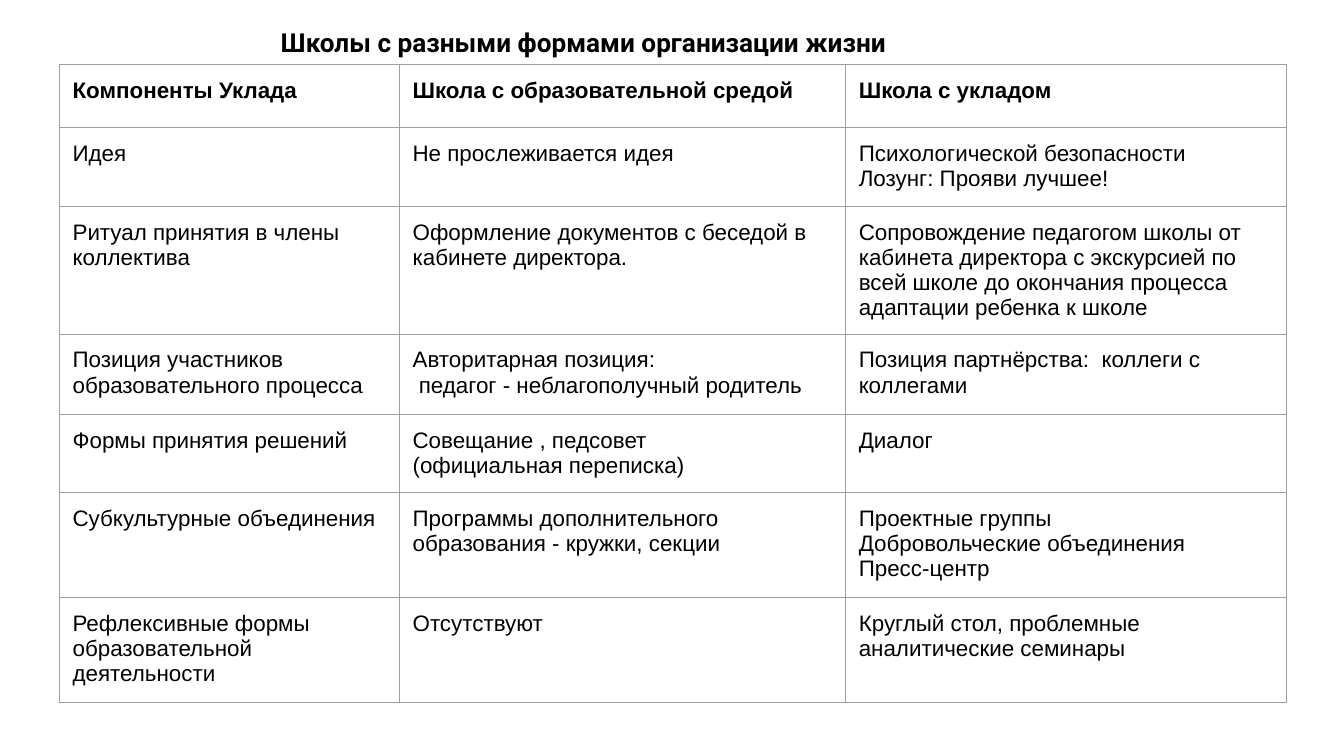
from lxml.etree import SubElement
from pptx import Presentation
from pptx.dml.color import RGBColor
from pptx.oxml.ns import qn
from pptx.util import Inches, Pt

WIDTH = Inches(10)
HEIGHT = WIDTH * 9 // 16
GRID = WIDTH // 1000
MARGINS = dict.fromkeys(("margin_left", "margin_right", "margin_top", "margin_bottom"), 10 * GRID)
TITLE = {"name": "Roboto", "size": Pt(14), "bold": True}
HEADING = {"name": "Arial", "size": Pt(12), "bold": True}
BODY = {**HEADING, "bold": False}


def color(value):
    return RGBColor.from_string(value)


def write(frame, words, style):
    frame.text = words
    for paragraph in frame.paragraphs:
        for run in paragraph.runs:
            run.font.color.rgb = color("000000")
            for key, value in style.items():
                setattr(run.font, key, value)


components = [
    ("Компоненты Уклада", "Школа с образовательной средой", "Школа с укладом"),
    ("Идея", "Не прослеживается идея", "Психологической безопасности\nЛозунг: Прояви лучшее!"),
    ("Ритуал принятия в члены коллектива",
     "Оформление документов с беседой в кабинете директора.",
     "Сопровождение педагогом школы от кабинета директора с экскурсией по всей школе "
     "до окончания процесса адаптации ребенка к школе"),
    ("Позиция участников образовательного процесса",
     "Авторитарная позиция:\n педагог - неблагополучный родитель",
     "Позиция партнёрства:  коллеги с коллегами"),
    ("Формы принятия решений", "Совещание , педсовет\n(официальная переписка)", "Диалог"),
    ("Субкультурные объединения",
     "Программы дополнительного образования - кружки, секции",
     "Проектные группы\nДобровольческие объединения\nПресс-центр"),
    ("Рефлексивные формы образовательной деятельности",
     "Отсутствуют",
     "Круглый стол, проблемные аналитические семинары"),
]
column_units = [253, 332, 328]
row_units = [47, 59, 94, 60, 58, 78, 78]

deck = Presentation()
deck.slide_width, deck.slide_height = WIDTH, HEIGHT
slide = deck.slides.add_slide(deck.slide_layouts[6])

comparison = slide.shapes.add_table(
    len(row_units), len(column_units), 44 * GRID, 48 * GRID,
    sum(column_units) * GRID, sum(row_units) * GRID).table
comparison.first_row = comparison.horz_banding = False
for column, units in zip(comparison.columns, column_units):
    column.width = units * GRID
for row, units in zip(comparison.rows, row_units):
    row.height = units * GRID

for r, component in enumerate(components):
    for c, words in enumerate(component):
        cell = comparison.cell(r, c)
        for key, value in MARGINS.items():
            setattr(cell, key, value)
        write(cell.text_frame, words, BODY if r else HEADING)
        borders = cell._tc.get_or_add_tcPr()
        for side in ("a:lnL", "a:lnR", "a:lnT", "a:lnB"):
            line = SubElement(borders, qn(side), w=str(Pt(0.75)))
            SubElement(SubElement(line, qn("a:solidFill")), qn("a:srgbClr"), val="9E9E9E")
        cell.fill.background()

heading = slide.shapes.add_textbox(199 * GRID, 10 * GRID, 558 * GRID, 44 * GRID).text_frame
for key, value in {**MARGINS, "word_wrap": True}.items():
    setattr(heading, key, value)
write(heading, "Школы с разными формами организации жизни", TITLE)

deck.save("out.pptx")
